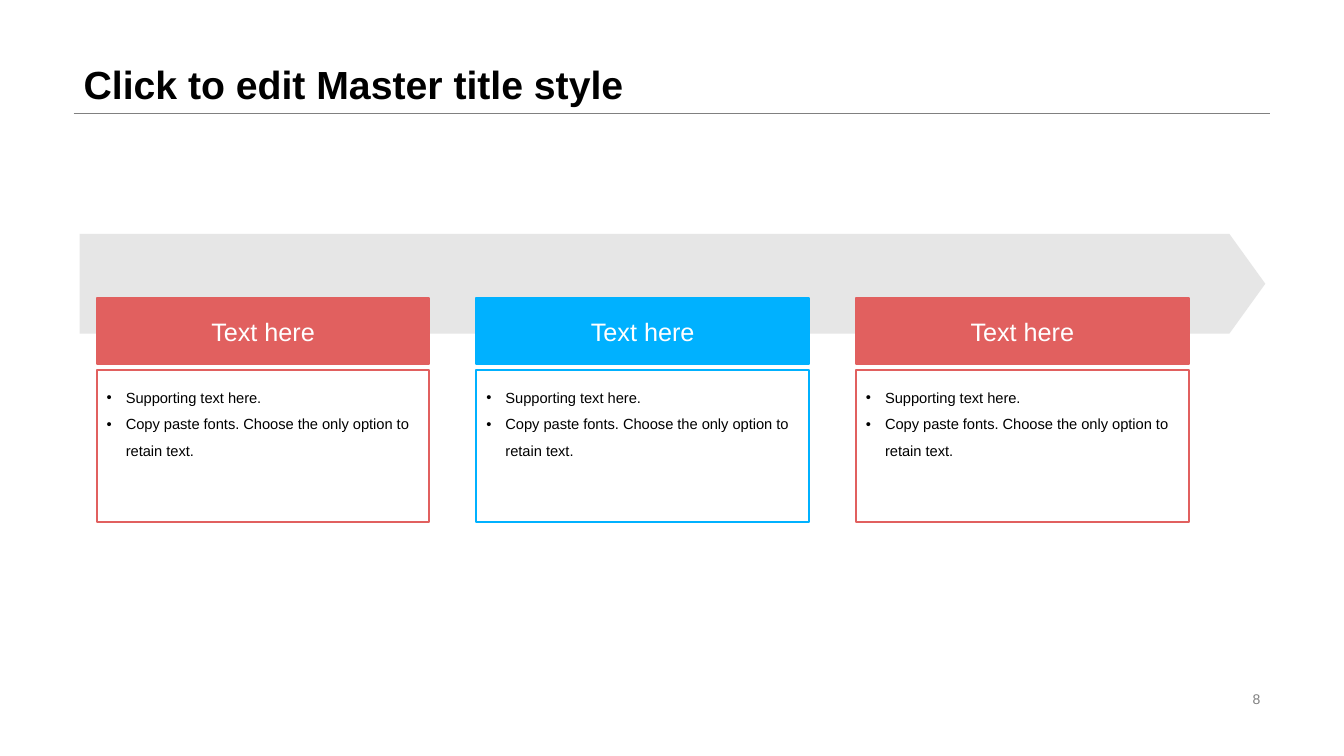
from lxml import etree
from pptx import Presentation
from pptx.dml.color import RGBColor
from pptx.enum.shapes import MSO_CONNECTOR, MSO_SHAPE
from pptx.enum.text import MSO_ANCHOR, MSO_AUTO_SIZE, PP_ALIGN
from pptx.oxml.ns import qn
from pptx.util import Inches, Pt

LEFT, CENTER, RIGHT = PP_ALIGN.LEFT, PP_ALIGN.CENTER, PP_ALIGN.RIGHT
TOP, MIDDLE, BOTTOM = MSO_ANCHOR.TOP, MSO_ANCHOR.MIDDLE, MSO_ANCHOR.BOTTOM
RECTANGLE, PENTAGON = MSO_SHAPE.RECTANGLE, MSO_SHAPE.PENTAGON
STRAIGHT, NO_AUTOFIT = MSO_CONNECTOR.STRAIGHT, MSO_AUTO_SIZE.NONE
TITLE_ONLY = 5

COLORS = {
    "black": "000000",
    "white": "FFFFFF",
    "gray": "808080",
    "band": "CCCCCC",
    "red": "E1605F",
    "blue": "00B1FF",
}
STEP_COLORS = ["red", "blue", "red"]
STEP_TITLE = "Text here"
STEP_POINTS = [
    "Supporting text here.",
    "Copy paste fonts. Choose the only option to retain text.",
]
STEP_LEFT, STEP_PITCH, STEP_WIDTH = 0.96, 3.765, 3.3


def rgb(name):
    return RGBColor.from_string(COLORS[name])


def add_bullet(para):
    """Give a paragraph a hanging bullet and a tab stop."""
    props = para._p.get_or_add_pPr()
    props.set("marL", str(Inches(0.19)))
    props.set("indent", str(-Inches(0.19)))
    etree.SubElement(props, qn("a:buFont"), typeface="Arial")
    etree.SubElement(props, qn("a:buChar"), char="•")
    tabs = etree.SubElement(props, qn("a:tabLst"))
    etree.SubElement(tabs, qn("a:tab"), pos=str(Inches(0.25)), algn="l")


def write(shape, *lines, size, color="black", bold=False, align=LEFT,
          anchor=MIDDLE, spacing=1.0, bullets=False, insets=(0.1, 0.05, 0.1, 0.05)):
    """Write one paragraph per line with a shared format."""
    frame = shape.text_frame
    frame.word_wrap = True
    frame.auto_size = NO_AUTOFIT
    frame.vertical_anchor = anchor
    (frame.margin_left, frame.margin_top,
     frame.margin_right, frame.margin_bottom) = map(Inches, insets)
    for index, line in enumerate(lines):
        para = frame.paragraphs[0] if index == 0 else frame.add_paragraph()
        if bullets:
            add_bullet(para)
        para.alignment = align
        para.line_spacing = spacing
        para.space_before = Pt(0)
        span = para.add_run()
        span.text = line
        span.font.name = "Arial"
        span.font.size = Pt(size)
        span.font.bold = bold
        span.font.color.rgb = rgb(color)


class ProcessPage:
    """Current slide and the elements placed on it."""

    def __init__(self, deck):
        self.page = deck.slides.add_slide(deck.slide_layouts[TITLE_ONLY])

    def title(self, text, left, top, width, height):
        box = self.page.shapes.title
        box.left, box.top = Inches(left), Inches(top)
        box.width, box.height = Inches(width), Inches(height)
        write(box, text, size=28, bold=True, anchor=BOTTOM, spacing=0.9)

    def rule(self, left, right, top):
        line = self.page.shapes.add_connector(
            STRAIGHT, Inches(left), Inches(top), Inches(right), Inches(top))
        line.line.color.rgb = rgb("gray")
        line.line.width = Pt(0.25)
        etree.SubElement(line._element.spPr, qn("a:effectLst"))

    def label(self, text, left, top, width, height, **style):
        box = self.page.shapes.add_textbox(*map(Inches, (left, top, width, height)))
        write(box, text, **style)

    def shape(self, kind, left, top, width, height, fill=None, outline=None):
        box = self.page.shapes.add_shape(kind, *map(Inches, (left, top, width, height)))
        box.shadow.inherit = False
        if fill:
            box.fill.solid()
            box.fill.fore_color.rgb = rgb(fill)
        else:
            box.fill.background()
        if outline:
            box.line.color.rgb = rgb(outline)
            box.line.width = Pt(1.5)
        else:
            box.line.fill.background()
        return box

    def arrow_band(self, left, top, width, height):
        band = self.shape(PENTAGON, left, top, width, height, fill="band")
        band.adjustments[0] = 0.36
        color = band._element.spPr.find(qn("a:solidFill"))[0]
        etree.SubElement(color, qn("a:alpha"), val="48000")

    def step(self, left, color):
        body = self.shape(RECTANGLE, left, 3.67, STEP_WIDTH, 1.51, outline=color)
        write(body, *STEP_POINTS, size=10.5, anchor=TOP, spacing=1.5,
              bullets=True, insets=(0.1, 0.1, 0.1, 0.05))
        header = self.shape(RECTANGLE, left, 2.96, STEP_WIDTH, 0.65,
                            fill=color, outline=color)
        write(header, STEP_TITLE, size=18, color="white", align=CENTER,
              insets=(0.05, 0.05, 0.05, 0.05))


def main():
    deck = Presentation()
    deck.slide_width, deck.slide_height = Inches(13.33), Inches(7.5)
    process = ProcessPage(deck)

    # Title, rule and page number
    process.rule(0.73, 12.6, 1.12)
    process.title("Click to edit Master title style", 0.73, 0, 11.87, 1.12)
    process.label("8", 9.42, 6.82, 3.18, 0.23, size=10, color="gray", align=RIGHT)

    # Arrow with the three steps on it
    process.arrow_band(0.79, 2.32, 11.76, 0.99)
    for index, color in enumerate(STEP_COLORS):
        process.step(STEP_LEFT + index * STEP_PITCH, color)

    deck.save("out.pptx")


if __name__ == "__main__":
    main()
